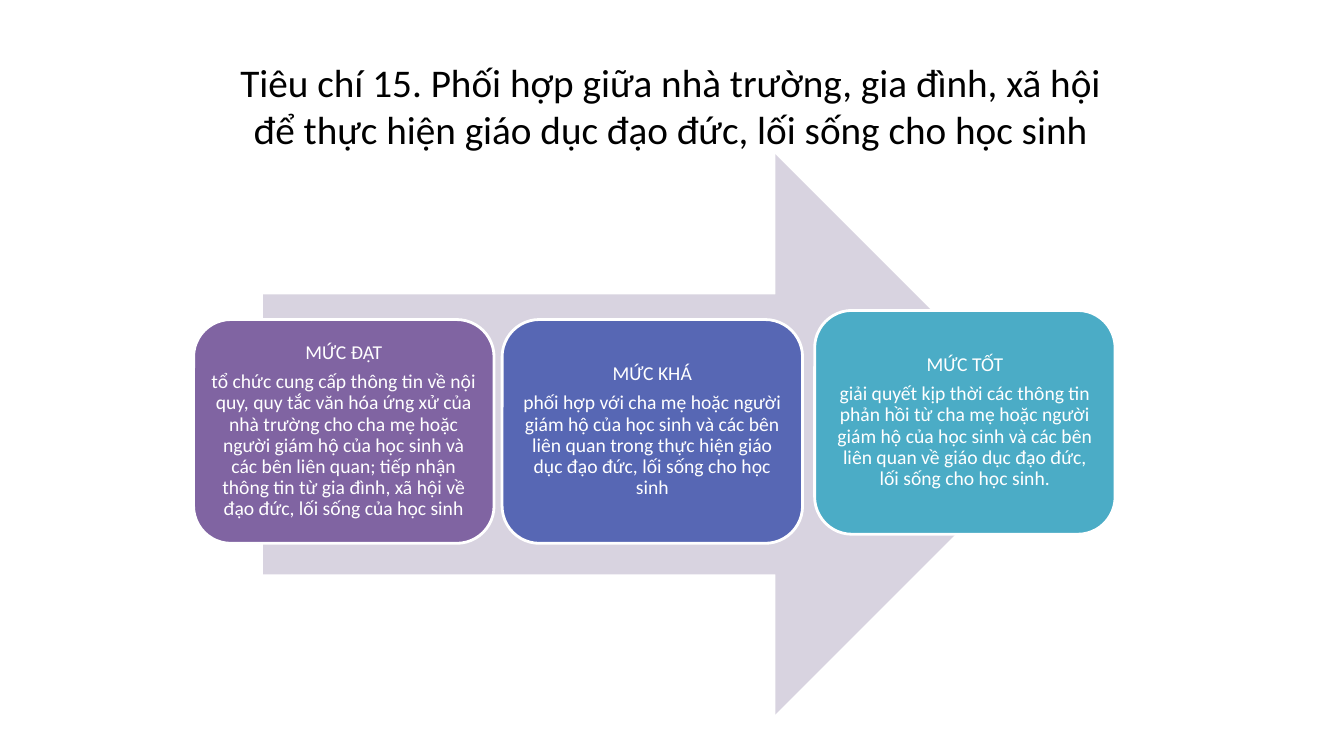
from pptx import Presentation
from pptx.dml.color import RGBColor
from pptx.enum.shapes import MSO_SHAPE
from pptx.enum.text import MSO_ANCHOR, PP_ALIGN
from pptx.util import Inches, Pt

COLORS = {
    "black": "000000",
    "white": "FFFFFF",
    "arrow": "D8D3E0",
    "purple": "8064A2",
    "blue": "5767B4",
    "teal": "4BACC6",
}
FONT = "Calibri"
TITLE = ("Tiêu chí 15. Phối hợp giữa nhà trường, gia đình, xã hội "
         "để thực hiện giáo dục đạo đức, lối sống cho học sinh")
CARD_SIZE = (2.98, 2.22)

# Left, top, fill, heading and description of each level
LEVELS = [
    (1.92, 3.17, "purple", "MỨC ĐẠT",
     "tổ chức cung cấp thông tin về nội quy, quy tắc văn hóa ứng xử của "
     "nhà trường cho cha mẹ hoặc người giám hộ của học sinh và các bên "
     "liên quan; tiếp nhận thông tin từ gia đình, xã hội về đạo đức, "
     "lối sống của học sinh"),
    (4.98, 3.17, "blue", "MỨC KHÁ",
     "phối hợp với cha mẹ hoặc người giám hộ của học sinh và các bên "
     "liên quan trong thực hiện giáo dục đạo đức, lối sống cho học sinh"),
    (8.08, 3.08, "teal", "MỨC TỐT",
     "giải quyết kịp thời các thông tin phản hồi từ cha mẹ hoặc người "
     "giám hộ của học sinh và các bên liên quan về giáo dục đạo đức, "
     "lối sống cho học sinh."),
]


def color(name):
    return RGBColor.from_string(COLORS[name])


def add_span(para, text, size, color_name):
    para.alignment = PP_ALIGN.CENTER
    span = para.add_run()
    span.text = text
    span.font.name = FONT
    span.font.size = Pt(size)
    span.font.color.rgb = color(color_name)


def add_filled_shape(page, kind, box, fill):
    shape = page.shapes.add_shape(kind, *(Inches(length) for length in box))
    shape.shadow.inherit = False
    shape.fill.solid()
    shape.fill.fore_color.rgb = color(fill)
    return shape


def place_title(page, box):
    title = page.shapes.title
    title.left, title.top, title.width, title.height = (
        Inches(length) for length in box)
    frame = title.text_frame
    frame.word_wrap = True
    frame.vertical_anchor = MSO_ANCHOR.MIDDLE
    add_span(frame.paragraphs[0], TITLE, 28, "black")


def add_arrow(page, box):
    arrow = add_filled_shape(page, MSO_SHAPE.RIGHT_ARROW, box, "arrow")
    arrow.line.fill.background()


def add_level_card(page, box, fill, heading, description):
    card = add_filled_shape(page, MSO_SHAPE.ROUNDED_RECTANGLE, box, fill)
    card.line.color.rgb = color("white")
    card.line.width = Pt(2)

    frame = card.text_frame
    frame.word_wrap = True
    frame.vertical_anchor = MSO_ANCHOR.MIDDLE
    frame.margin_left = frame.margin_right = Inches(0.06)
    frame.margin_top = frame.margin_bottom = Inches(0.06)

    heading_para = frame.paragraphs[0]
    heading_para.space_after = Pt(5.5)
    for para, text in ((heading_para, heading),
                       (frame.add_paragraph(), description)):
        para.line_spacing = 0.9
        add_span(para, text, 14, "white")


def main():
    deck = Presentation()
    deck.slide_width, deck.slide_height = Inches(13.33), Inches(7.5)
    page = deck.slides.add_slide(deck.slide_layouts[5])  # title only

    # Title
    place_title(page, (2.15, 0.42, 9, 1.25))

    # Arrow behind the three levels
    add_arrow(page, (2.61, 1.53, 7.86, 5.56))
    for left, top, fill, heading, description in LEVELS:
        add_level_card(page, (left, top, *CARD_SIZE),
                       fill, heading, description)

    deck.save("out.pptx")


if __name__ == "__main__":
    main()
